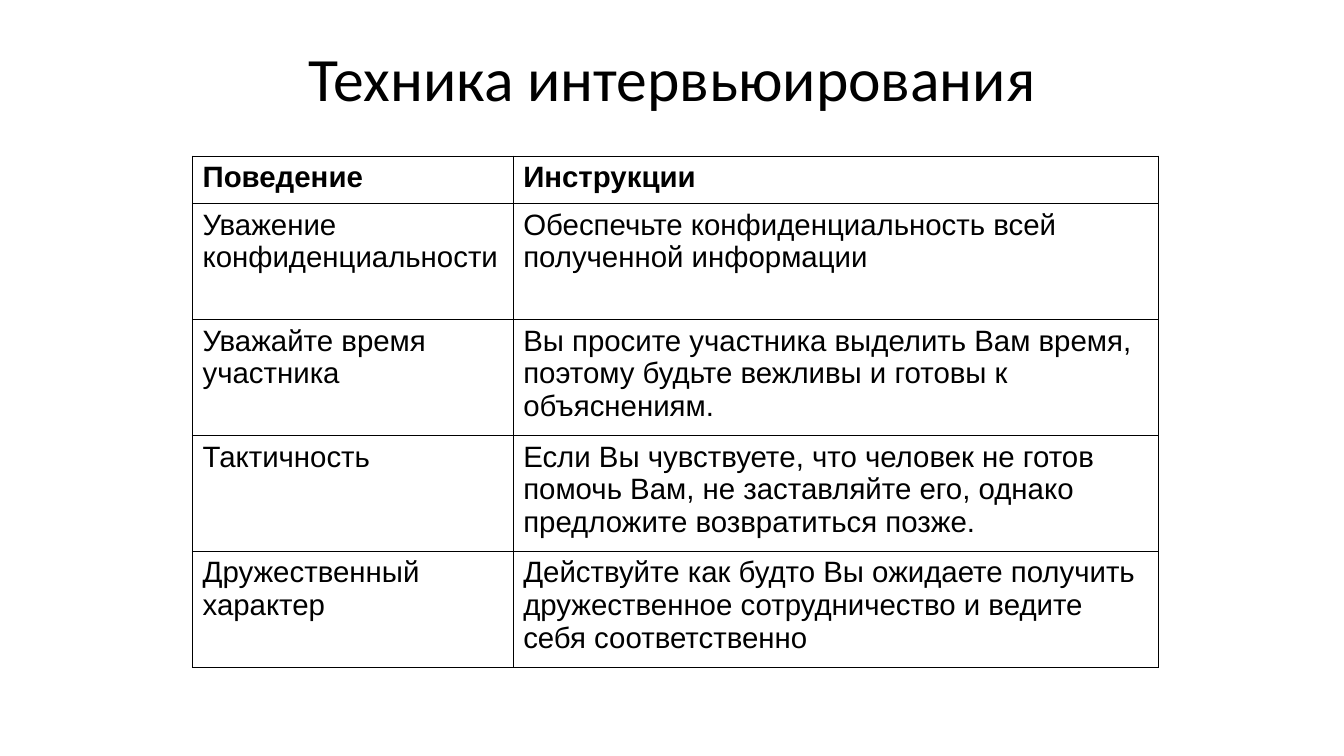
from lxml import etree
from pptx import Presentation
from pptx.dml.color import RGBColor
from pptx.enum.text import MSO_ANCHOR, PP_ALIGN
from pptx.oxml.ns import qn
from pptx.util import Inches, Pt

CENTER = PP_ALIGN.CENTER
MIDDLE = MSO_ANCHOR.MIDDLE
TITLE_ONLY = 5
BLACK = "000000"
WHITE = "FFFFFF"

COLUMN_WIDTHS = [3.18, 6.4]
HEADER_HEIGHT = 0.47
ROW_HEIGHT = 1.15
TABLE_ROWS = [
    ("Поведение", "Инструкции"),
    ("Уважение конфиденциальности",
     "Обеспечьте конфиденциальность всей полученной информации"),
    ("Уважайте время участника",
     "Вы просите участника выделить Вам время, поэтому будьте вежливы "
     "и готовы к объяснениям."),
    ("Тактичность",
     "Если Вы чувствуетe, что человек не готов помочь Вам, "
     "не заставляйте его, однако предложите возвратиться позже."),
    ("Дружественный характер",
     "Действуйте как будто Вы ожидаете получить дружественное "
     "сотрудничество и ведите себя соответственно"),
]


def color(hex_string):
    return RGBColor.from_string(hex_string)


def set_font(paragraph, name, size, bold=False):
    paragraph.font.name = name
    paragraph.font.size = Pt(size)
    paragraph.font.bold = bold
    paragraph.font.color.rgb = color(BLACK)


def add_cell_borders(cell, hex_string, width):
    properties = cell._tc.get_or_add_tcPr()
    for index, side in enumerate(("lnL", "lnR", "lnT", "lnB")):
        line = etree.Element(qn(f"a:{side}"), w=str(Pt(width)))
        fill = etree.SubElement(line, qn("a:solidFill"))
        etree.SubElement(fill, qn("a:srgbClr"), val=hex_string)
        properties.insert(index, line)


def place_title(slide, text, left, top, width, height):
    title = slide.shapes.title
    title.left, title.top = Inches(left), Inches(top)
    title.width, title.height = Inches(width), Inches(height)
    title.text_frame.text = text
    title.text_frame.vertical_anchor = MIDDLE
    paragraph = title.text_frame.paragraphs[0]
    paragraph.alignment = CENTER
    set_font(paragraph, "Calibri", 44)


def add_behavior_table(slide, left, top):
    row_heights = [HEADER_HEIGHT] + [ROW_HEIGHT] * (len(TABLE_ROWS) - 1)
    table = slide.shapes.add_table(
        len(TABLE_ROWS), len(COLUMN_WIDTHS), Inches(left), Inches(top),
        Inches(sum(COLUMN_WIDTHS)), Inches(sum(row_heights))).table
    table.horz_banding = False
    for column, width in zip(table.columns, COLUMN_WIDTHS):
        column.width = Inches(width)

    for row_index, texts in enumerate(TABLE_ROWS):
        table.rows[row_index].height = Inches(row_heights[row_index])
        for column_index, text in enumerate(texts):
            cell = table.cell(row_index, column_index)
            cell.text = text
            cell.fill.solid()
            cell.fill.fore_color.rgb = color(WHITE)
            add_cell_borders(cell, BLACK, 1)
            set_font(cell.text_frame.paragraphs[0], "Arial", 21,
                     bold=row_index == 0)


def main():
    presentation = Presentation()
    presentation.slide_width = Inches(13.33)
    presentation.slide_height = Inches(7.5)
    slide = presentation.slides.add_slide(
        presentation.slide_layouts[TITLE_ONLY])

    # Heading
    place_title(slide, "Техника интервьюирования", 1.67, 0.29, 10, 0.94)
    # Behaviour and instructions
    add_behavior_table(slide, 1.91, 1.55)

    presentation.save("out.pptx")


if __name__ == "__main__":
    main()
